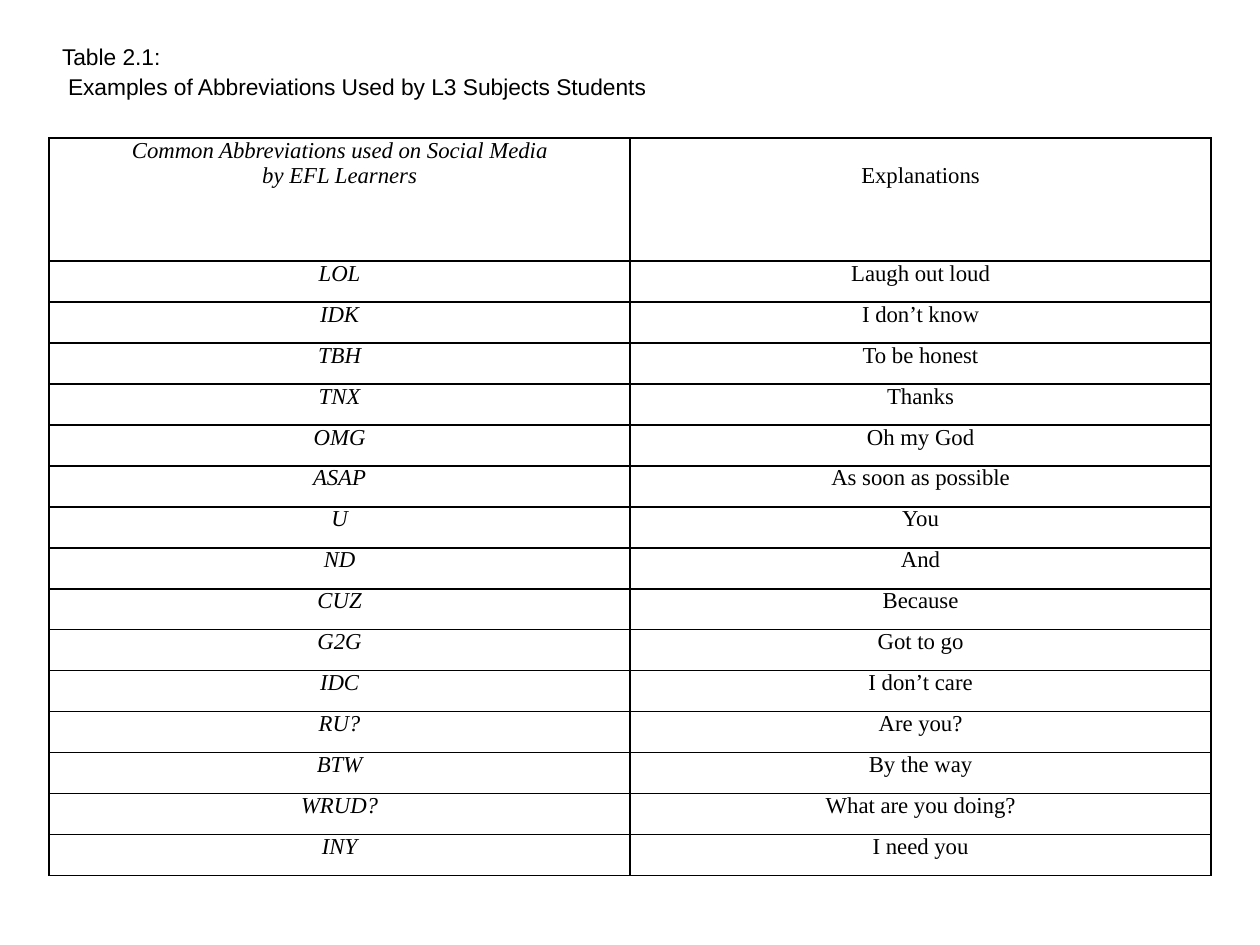
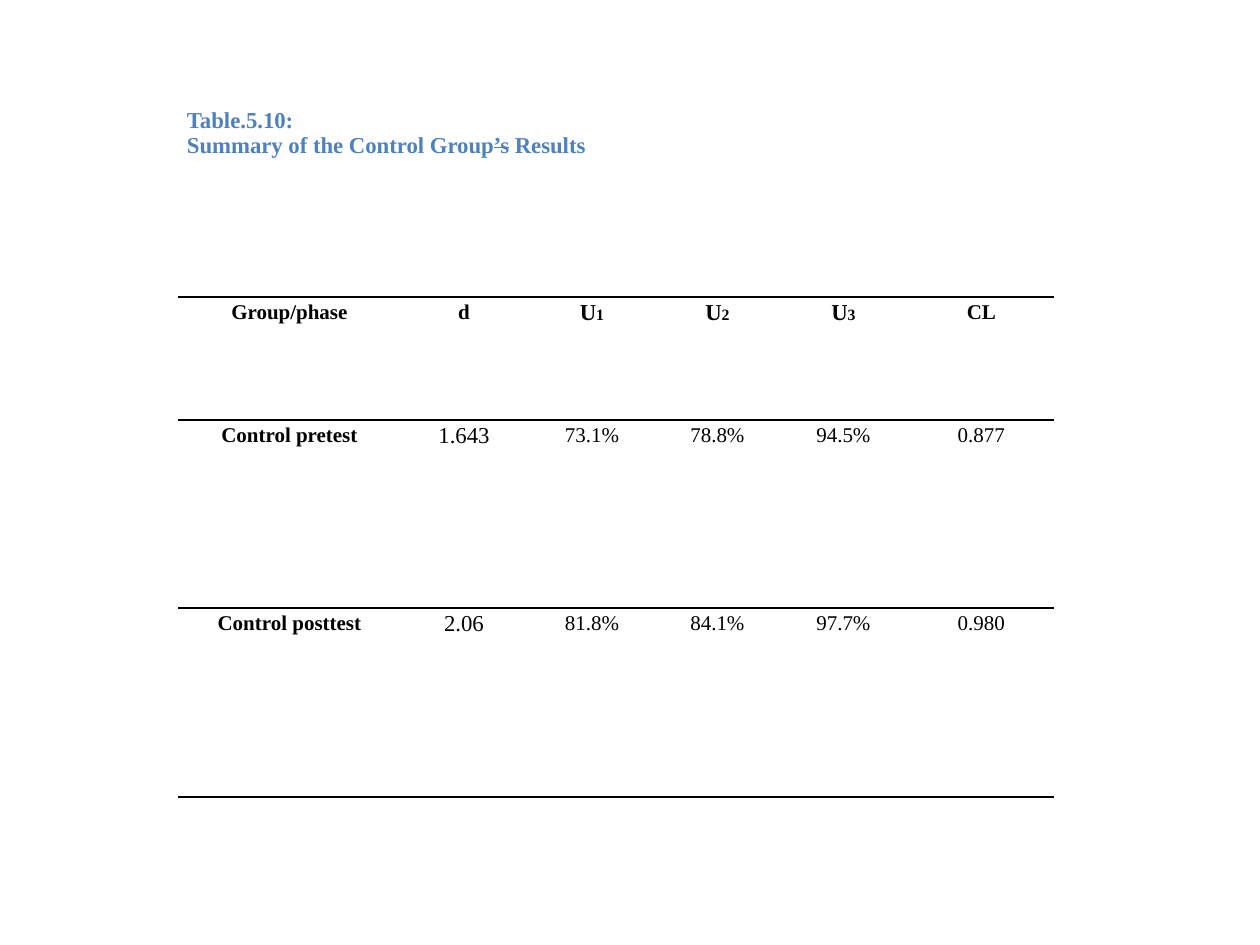
from lxml import etree
from pptx import Presentation
from pptx.dml.color import RGBColor
from pptx.enum.text import MSO_ANCHOR, MSO_AUTO_SIZE, PP_ALIGN
from pptx.oxml.ns import qn
from pptx.util import Pt

CENTER, LEFT = PP_ALIGN.CENTER, PP_ALIGN.LEFT
TOP = MSO_ANCHOR.TOP
NO_AUTOFIT = MSO_AUTO_SIZE.NONE

PX = 914400 / 126
COLORS = {"text": "000000", "paper": "FFFFFF", "caption": "4F81BD"}
SERIF, SANS = "Times New Roman", "Arial"
NO_STYLE_NO_GRID = "{2D5ABB26-0587-4C30-8999-92F81FD0307C}"
TITLE_ONLY, BLANK = 5, 6


def add_plain_table(slide, left, top, widths, heights):
    """Add an unstyled table with the given column widths and row heights in px."""
    box = [round(v * PX) for v in (left, top, sum(widths), sum(heights))]
    table = slide.shapes.add_table(len(heights), len(widths), *box).table
    table.first_row = table.horz_banding = False
    table._tbl.tblPr.find(qn("a:tableStyleId")).text = NO_STYLE_NO_GRID
    for column, width in zip(table.columns, widths):
        column.width = round(width * PX)
    for row, height in zip(table.rows, heights):
        row.height = round(height * PX)
    return table


def finish_cell(cell, borders, line_width, size, color="text", align=CENTER,
                bold=False, italic=False, spacing=None):
    """Set borders (a string of L, R, T, B), insets and type of a filled-in cell."""
    cell.margin_left = cell.margin_right = round(9 * PX)
    cell.margin_top = cell.margin_bottom = 0
    cell.vertical_anchor = TOP
    properties = cell._tc.get_or_add_tcPr()
    for side in borders:
        line = etree.SubElement(properties, qn(f"a:ln{side}"), w=str(Pt(line_width)))
        fill = etree.SubElement(line, qn("a:solidFill"))
        etree.SubElement(fill, qn("a:srgbClr"), val=COLORS["text"])
    cell.fill.background()
    for paragraph in cell.text_frame.paragraphs:
        paragraph.alignment = align
        if spacing:
            paragraph.line_spacing = spacing
        for run in paragraph.runs:
            run.font.name, run.font.size = SERIF, Pt(size)
            run.font.bold, run.font.italic = bold, italic
            run.font.color.rgb = RGBColor.from_string(COLORS[color])


prs = Presentation()
prs.slide_width, prs.slide_height = round(1260 * PX), round(945 * PX)

# Slide 1: abbreviations
slide = prs.slides.add_slide(prs.slide_layouts[TITLE_ONLY])
title = slide.shapes.title
title.left, title.top, title.width, title.height = (
    round(v * PX) for v in (49, 39, 1182, 134))
title.fill.solid()
title.fill.fore_color.rgb = RGBColor.from_string(COLORS["paper"])
heading = title.text_frame
heading.auto_size = NO_AUTOFIT
heading.vertical_anchor = TOP
heading.margin_left, heading.margin_top = round(13 * PX), round(4 * PX)
heading.text = "Table 2.1:\nExamples of Abbreviations Used by L3 Subjects Students"
for paragraph in heading.paragraphs:
    paragraph.alignment = LEFT
    font = paragraph.runs[0].font
    font.name, font.size = SANS, Pt(13)
    font.color.rgb = RGBColor.from_string(COLORS["text"])
subject = heading.paragraphs[1]
subject.space_before = Pt(1.5)
subject._p.get_or_add_pPr().set("marL", str(round(6 * PX)))

abbreviations = [
    ("Common Abbreviations used on Social Media\vby EFL Learners", "Explanations"),
    ("LOL", "Laugh out loud"),
    ("IDK", "I don’t know"),
    ("TBH", "To be honest"),
    ("TNX", "Thanks"),
    ("OMG", "Oh my God"),
    ("ASAP", "As soon as possible"),
    ("U", "You"),
    ("ND", "And"),
    ("CUZ", "Because"),
    ("G2G", "Got to go"),
    ("IDC", "I don’t care"),
    ("RU?", "Are you?"),
    ("BTW", "By the way"),
    ("WRUD?", "What are you doing?"),
    ("INY", "I need you"),
]
glossary = add_plain_table(slide, 49, 138, [581] * 2,
                           [123] + [41] * (len(abbreviations) - 1))
for r, entry in enumerate(abbreviations):
    for c, text in enumerate(entry):
        cell = glossary.cell(r, c)
        cell.text_frame.text = text
        finish_cell(cell, "LRTB", 1, 13, italic=c == 0)
# The second heading sits level with the second line of the first
glossary.cell(0, 1).margin_top = round(25 * PX)

# Slide 2: control group results
slide = prs.slides.add_slide(prs.slide_layouts[BLANK])
results = add_plain_table(slide, 178, 108, [223, 126, 130, 121, 131, 145],
                          [189, 123, 188, 189])

# Caption across the first row
caption = results.cell(0, 0)
caption.merge(results.cell(0, 5))
caption.text_frame.text = "Table.5.10:\nSummary of the Control Group"
summary = caption.text_frame.paragraphs[1]
possessive = summary.add_run()
possessive.text = "’s"
possessive._r.get_or_add_rPr().set("strike", "sngStrike")
summary.add_run().text = " Results"
finish_cell(caption, "", 0, 13, "caption", LEFT, bold=True)

# Measures and values
measures = [
    ("Group/phase", "d", "U1", "U2", "U3", "CL"),
    ("Control pretest", "1.643", "73.1%", "78.8%", "94.5%", "0.877"),
    ("Control posttest", "2.06", "81.8%", "84.1%", "97.7%", "0.980"),
]
row_borders = ["TB", "T", "B"]
for r, (values, borders) in enumerate(zip(measures, row_borders)):
    for c, text in enumerate(values):
        cell = results.cell(r + 1, c)
        indexed = text.startswith("U")
        cell.text_frame.text = text[0] if indexed else text
        if indexed:
            index = cell.text_frame.paragraphs[0].add_run()
            index.text = text[1]
        large = indexed or (r > 0 and c == 1)
        finish_cell(cell, borders, 1.5, 13 if large else 12,
                    bold=r == 0 or c == 0, spacing=1.15)
        if indexed:
            index.font.size = Pt(9)

prs.save("out.pptx")
